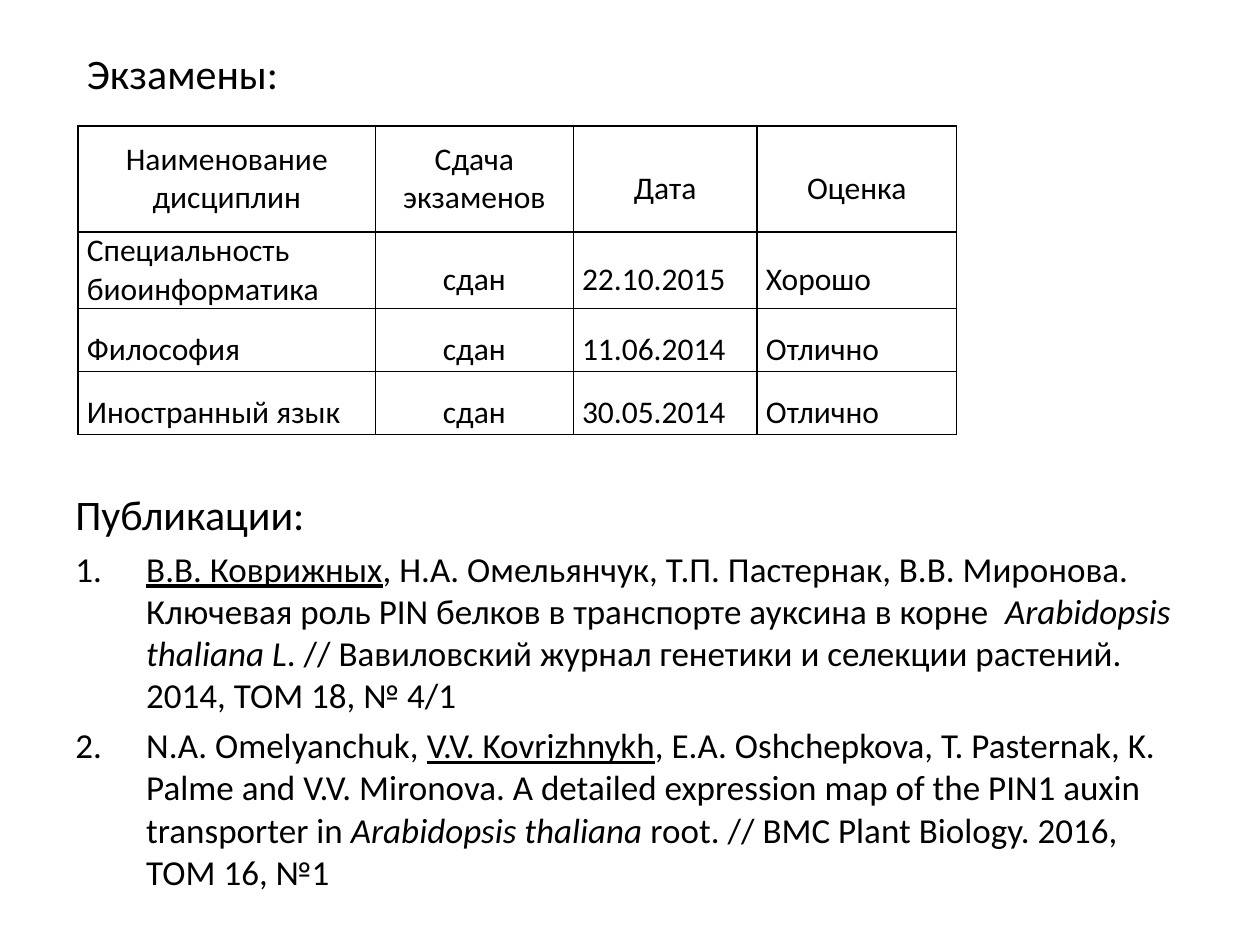
from dataclasses import dataclass

from lxml.etree import SubElement
from pptx import Presentation
from pptx.dml.color import RGBColor
from pptx.enum.text import MSO_ANCHOR, MSO_AUTO_SIZE, PP_ALIGN
from pptx.oxml.ns import qn
from pptx.util import Inches, Pt


@dataclass(frozen=True)
class Theme:
    """Colours, font and type sizes of the slide."""
    ink: str = "000000"
    font: str = "Calibri"
    heading: int = 24
    body: int = 20
    cell: int = 18
    border: int = 1
    space: float = 4.8


THEME = Theme()
HEADER = ["Наименование дисциплин", "Сдача экзаменов", "Дата", "Оценка"]
EXAMS = [
    ["Специальность биоинформатика", "сдан", "22.10.2015", "Хорошо"],
    ["Философия", "сдан", "11.06.2014", "Отлично"],
    ["Иностранный язык", "сдан", "30.05.2014", "Отлично"],
]
TWO_LINE = {HEADER[0], HEADER[1], EXAMS[0][0]}
COL_SHARES = [2.36, 1.57, 1.46, 1.58]
ROW_SHARES = [0.84, 0.61, 0.5, 0.5]
PUBLICATIONS = [
    [("В.В. Коврижных", {"underline": True}),
     (", Н.А. Омельянчук, Т.П. Пастернак, В.В. Миронова. Ключевая роль PIN белков "
      "в транспорте ауксина в корне  ", {}),
     ("Arabidopsis thaliana L", {"italic": True}),
     (". // Вавиловский журнал генетики и селекции растений. 2014, ТОМ 18, № 4/1", {})],
    [("N.A. Omelyanchuk, ", {}),
     ("V.V. Kovrizhnykh", {"underline": True}),
     (", E.A. Oshchepkova, T. Pasternak, K. Palme and V.V. Mironova. A detailed "
      "expression map of the PIN1 auxin transporter in ", {}),
     ("Arabidopsis thaliana ", {"italic": True}),
     ("root. // BMC Plant Biology. 2016, ТОМ 16, №1", {})],
]


def add_text(p, text, size, italic=None, underline=None):
    """Append a formatted run to a paragraph."""
    r = p.add_run()
    r.text = text
    r.font.name = THEME.font
    r.font.size = Pt(size)
    r.font.color.rgb = RGBColor.from_string(THEME.ink)
    r.font.italic = italic
    r.font.underline = underline


def number_paragraph(p, indent):
    """Give a paragraph a hanging indent and automatic numbering."""
    pPr = p._p.get_or_add_pPr()
    pPr.set("marL", str(indent))
    pPr.set("indent", str(-indent))
    SubElement(pPr, qn("a:buFont"), typeface="+mj-lt")
    SubElement(pPr, qn("a:buAutoNum"), type="arabicPeriod")


def draw_borders(cell):
    """Outline all four sides of a table cell."""
    tcPr = cell._tc.get_or_add_tcPr()
    for side in ("lnL", "lnR", "lnT", "lnB"):
        ln = SubElement(tcPr, qn(f"a:{side}"), w=str(Pt(THEME.border)))
        fill = SubElement(ln, qn("a:solidFill"))
        SubElement(fill, qn("a:srgbClr"), val=THEME.ink)


def add_heading(slide, box):
    """Place the slide title in the box."""
    sp = slide.shapes.title
    sp.left, sp.top, sp.width, sp.height = box
    tf = sp.text_frame
    tf.word_wrap = True
    tf.auto_size = MSO_AUTO_SIZE.SHAPE_TO_FIT_TEXT
    tf.vertical_anchor = MSO_ANCHOR.TOP
    p = tf.paragraphs[0]
    p.alignment = PP_ALIGN.LEFT
    add_text(p, "Экзамены:", THEME.heading)


def fill_cell(cell, text, centred):
    """Write and format one table cell."""
    cell.margin_left = cell.margin_right = Inches(0.07)
    cell.margin_top = cell.margin_bottom = 0
    cell.vertical_anchor = MSO_ANCHOR.MIDDLE
    draw_borders(cell)
    cell.fill.background()
    p = cell.text_frame.paragraphs[0]
    p.alignment = PP_ALIGN.CENTER if centred else PP_ALIGN.JUSTIFY
    p.line_spacing = 1.0 if text in TWO_LINE else 1.5
    add_text(p, text, THEME.cell)


def add_exams(slide, box):
    """Place the table of exams in the box."""
    rows = [HEADER, *EXAMS]
    table = slide.shapes.add_table(len(rows), len(HEADER), *box).table
    table.first_row = table.horz_banding = False
    for col, share in zip(table.columns, COL_SHARES):
        col.width = int(box[2] * share / sum(COL_SHARES))
    for row, share in zip(table.rows, ROW_SHARES):
        row.height = int(box[3] * share / sum(ROW_SHARES))
    for i, values in enumerate(rows):
        for j, text in enumerate(values):
            fill_cell(table.cell(i, j), text, centred=i == 0 or j == 1)


def add_publications(slide, box):
    """Place the numbered list of publications in the box."""
    tf = slide.shapes.add_textbox(*box).text_frame
    tf.word_wrap = True
    add_text(tf.paragraphs[0], "Публикации:", THEME.heading)
    for runs in PUBLICATIONS:
        p = tf.add_paragraph()
        p.space_before = Pt(THEME.space)
        number_paragraph(p, int(box[2] / 16))
        for text, style in runs:
            add_text(p, text, THEME.body, **style)


def main():
    """Build and save the slide."""
    prs = Presentation()
    prs.slide_width, prs.slide_height = Inches(10), Inches(7.5)
    slide = prs.slides.add_slide(prs.slide_layouts[5])
    add_heading(slide, [Inches(v) for v in (0.59, 0.33, 4.58, 0.5)])
    add_exams(slide, [Inches(v) for v in (0.62, 1, 6.97, 2.45)])
    add_publications(slide, [Inches(v) for v in (0.5, 3.83, 9, 3.6)])
    prs.save("out.pptx")


if __name__ == "__main__":
    main()
